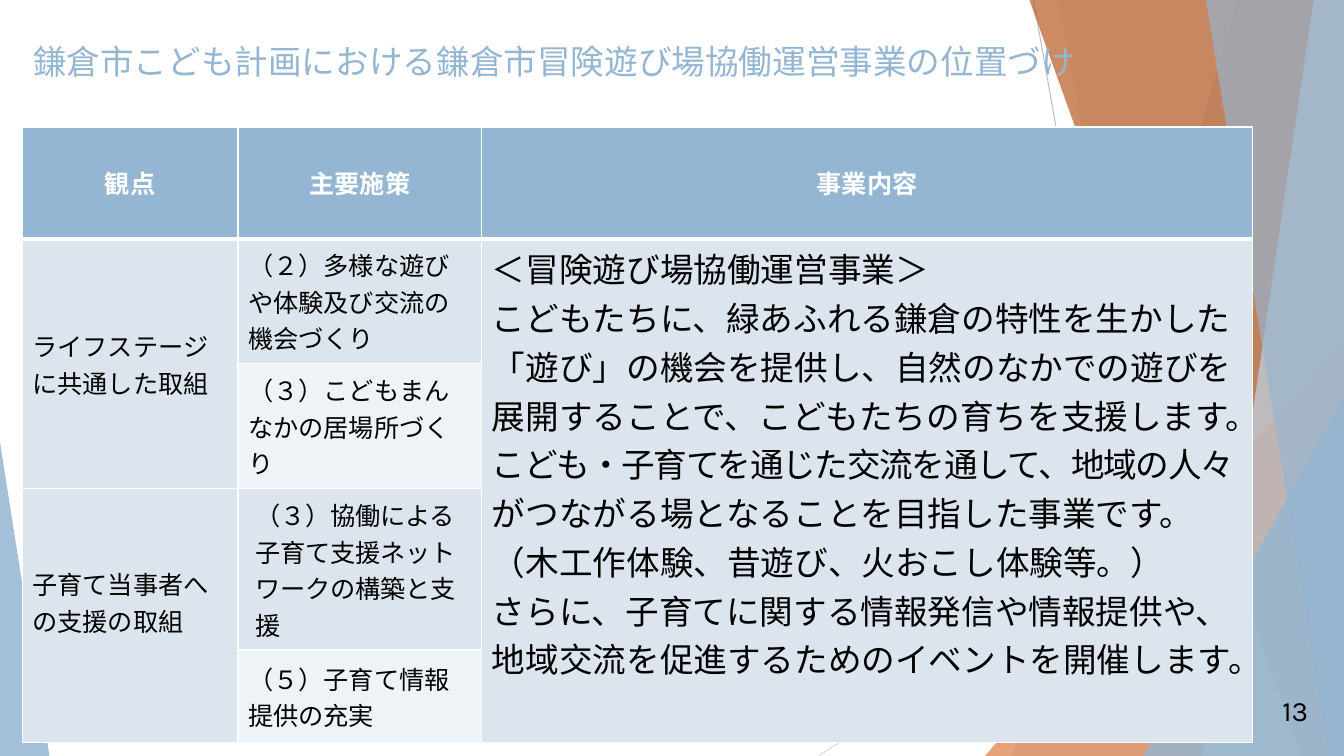
from pptx import Presentation
from pptx.dml.color import RGBColor
from pptx.enum.shapes import MSO_CONNECTOR, MSO_SHAPE
from pptx.enum.text import MSO_ANCHOR, PP_ALIGN
from pptx.oxml.ns import qn
from pptx.util import Inches, Pt
from lxml import etree

LINE = MSO_CONNECTOR.STRAIGHT
TRI = MSO_SHAPE.ISOSCELES_TRIANGLE
TOP, MID = MSO_ANCHOR.TOP, MSO_ANCHOR.MIDDLE
LEFT, CENTER = PP_ALIGN.LEFT, PP_ALIGN.CENTER
WIDE, HIGH = 13.33, 7.5
BLUE, PALE, MIST = "94B6D2", "DCE5EE", "EEF3F7"
WHITE, BLACK = "FFFFFF", "000000"
KARLA, NOTO = "Karla", "Noto Sans CJK JP"

RAYS = [("BFBFBF", (10.25, 0, 11.58, HIGH)),
        ("D9D9D9", (WIDE, 4.03, 8.12, HIGH))]
BANDS = [(12.28, 10.04, BLUE, 30), (10.5, 11.83, BLUE, 20),
         (9.77, 3.33, 3.56, 4.17, 1, "DD8047", 72),
         (10.21, 12.91, "B95B22", 70), (13.03, 11.92, "BFD3E4", 70),
         (11.96, 13.18, BLUE, 65),
         (11.34, 3.93, 1.99, 3.57, 1, BLUE, 80),
         (0, 4.39, 0.49, 3.11, 0, BLUE, 85)]

COLS = [2.14, 2.42, 7.64]
ROWS = [1.11, 1.24, 1.24, 1.6, 0.92]
HEADS = ["観点", "主要施策", "事業内容"]
VIEWS = ["ライフステージに共通した取組", "子育て当事者への支援の取組"]
PLANS = ["（２）多様な遊びや体験及び交流の機会づくり",
         "（３）こどもまんなかの居場所づくり",
         "（３）協働による子育て支援ネットワークの構築と支援",
         "（５）子育て情報提供の充実"]
TIGHT = "こども・子育てを通じた交流を通して、地域の人々"
WORK = ["＜冒険遊び場協働運営事業＞",
        "こどもたちに、緑あふれる鎌倉の特性を生かした「遊び」の機会を提供し、"
        "自然のなかでの遊びを展開することで、こどもたちの育ちを支援します。"
        + TIGHT +
        "がつながる場となることを"
        "目指した事業です。（木工作体験、昔遊び、火おこし体験等。）",
        "さらに、子育てに関する情報発信や情報提供や、"
        "地域交流を促進するためのイベントを開催します。"]


def rgb(code):
    return RGBColor.from_string(code)


def write(frame, lines, size, color=BLACK, bold=False, font=KARLA, align=LEFT):
    look = {"size": Pt(size), "bold": bold, "name": font}
    for i, line in enumerate(lines):
        para = frame.paragraphs[0] if i == 0 else frame.add_paragraph()
        para.alignment = align
        before, tight, after = line.partition(TIGHT)
        for part in filter(None, (before, tight, after)):
            run = para.add_run()
            run.text = part
            for key, value in look.items():
                setattr(run.font, key, value)
            run.font.color.rgb = rgb(color)
            props = run.font._element
            etree.SubElement(props, qn("a:ea")).set("typeface", NOTO)
            if part == TIGHT:
                props.set("spc", "-90")


def label(slide, box, text, size, color):
    frame = slide.shapes.add_textbox(*map(Inches, box)).text_frame
    look = {"word_wrap": True, "vertical_anchor": TOP}
    for key, value in look.items():
        setattr(frame, key, value)
    write(frame, [text], size, color)


def paint(shape, color, alpha):
    shape.shadow.inherit = False
    shape.fill.solid()
    shape.fill.fore_color.rgb = rgb(color)
    shape.line.fill.background()
    tint = shape.fill._xPr.find(qn("a:solidFill"))[0]
    etree.SubElement(tint, qn("a:alpha")).set("val", str(alpha * 1000))


def ray(slide, ends, color):
    line = slide.shapes.add_connector(LINE, *map(Inches, ends))
    line.line.color.rgb = rgb(color)
    line.line.width = Pt(0.75)
    etree.SubElement(line._element.spPr, qn("a:effectLst"))


def band(slide, box, top, foot):
    x, y, w, h = box
    pen = slide.shapes.build_freeform(Inches(top), Inches(y), scale=1)
    points = [(x + w, y), (x + w, y + h), (foot, y + h)]
    pen.add_line_segments([(Inches(a), Inches(b)) for a, b in points])
    return pen.convert_to_shape()


def wedge(slide, box, peak):
    shape = slide.shapes.add_shape(TRI, *map(Inches, box))
    shape.adjustments[0] = peak
    return shape


def decor(slide, box):
    for color, ends in RAYS:
        ray(slide, ends, color)
    for *place, color, alpha in BANDS:
        if len(place) == 2:
            shape = band(slide, box, *place)
        else:
            shape = wedge(slide, place[:4], place[4])
        paint(shape, color, alpha)


def edge(cell, head):
    props = cell._tc.get_or_add_tcPr()
    for i, side in enumerate(["lnL", "lnR", "lnT", "lnB"]):
        width = 3 if head and side == "lnB" else 1
        line = etree.Element(qn("a:" + side), w=str(Pt(width)))
        fill = etree.SubElement(line, qn("a:solidFill"))
        etree.SubElement(fill, qn("a:srgbClr")).set("val", WHITE)
        props.insert(i, line)


def grid(slide, box):
    table = slide.shapes.add_table(len(ROWS), len(COLS), *map(Inches, box)).table
    for col, width in zip(table.columns, COLS):
        col.width = Inches(width)
    for row, height in zip(table.rows, ROWS):
        row.height = Inches(height)
    for r in range(len(ROWS)):
        for c in range(len(COLS)):
            cell = table.cell(r, c)
            cell.vertical_anchor = MID
            cell.fill.solid()
            tone = MIST if c == 1 and r in (2, 4) else PALE
            cell.fill.fore_color.rgb = rgb(tone if r else BLUE)
            edge(cell, r == 0)
    for c, head in enumerate(HEADS):
        write(table.cell(0, c).text_frame, [head], 18, WHITE, True, align=CENTER)
    for i, view in enumerate(VIEWS):
        cell = table.cell(1 + 2 * i, 0)
        cell.merge(table.cell(2 + 2 * i, 0))
        write(cell.text_frame, [view], 18)
    cell.margin_bottom = Inches(0.32)
    for r, plan in enumerate(PLANS, 1):
        write(table.cell(r, 1).text_frame, [plan], 18, font=NOTO if r == 3 else KARLA)
    para = table.cell(3, 1).text_frame.paragraphs[0]
    para.space_before = Pt(3.5)
    para._p.get_or_add_pPr().set("marL", str(Inches(0.07)))
    para.runs[0].font._element.set("spc", "-10")
    cell = table.cell(1, 2)
    cell.merge(table.cell(4, 2))
    cell.vertical_anchor = TOP
    write(cell.text_frame, WORK, 24)


def main():
    deck = Presentation()
    deck.slide_width, deck.slide_height = Inches(WIDE), Inches(HIGH)
    slide = deck.slides.add_slide(deck.slide_layouts[6])
    decor(slide, (0, 0, WIDE, HIGH))
    label(slide, (0.23, 0.36, 11.62, 0.59),
          "鎌倉市こども計画における鎌倉市冒険遊び場協働運営事業の位置づけ", 24, BLUE)
    grid(slide, (0.22, 1.26, sum(COLS), sum(ROWS)))
    label(slide, (12.62, 6.83, 0.49, 0.44), "13", 20, BLACK)
    deck.save("out.pptx")


if __name__ == "__main__":
    main()
